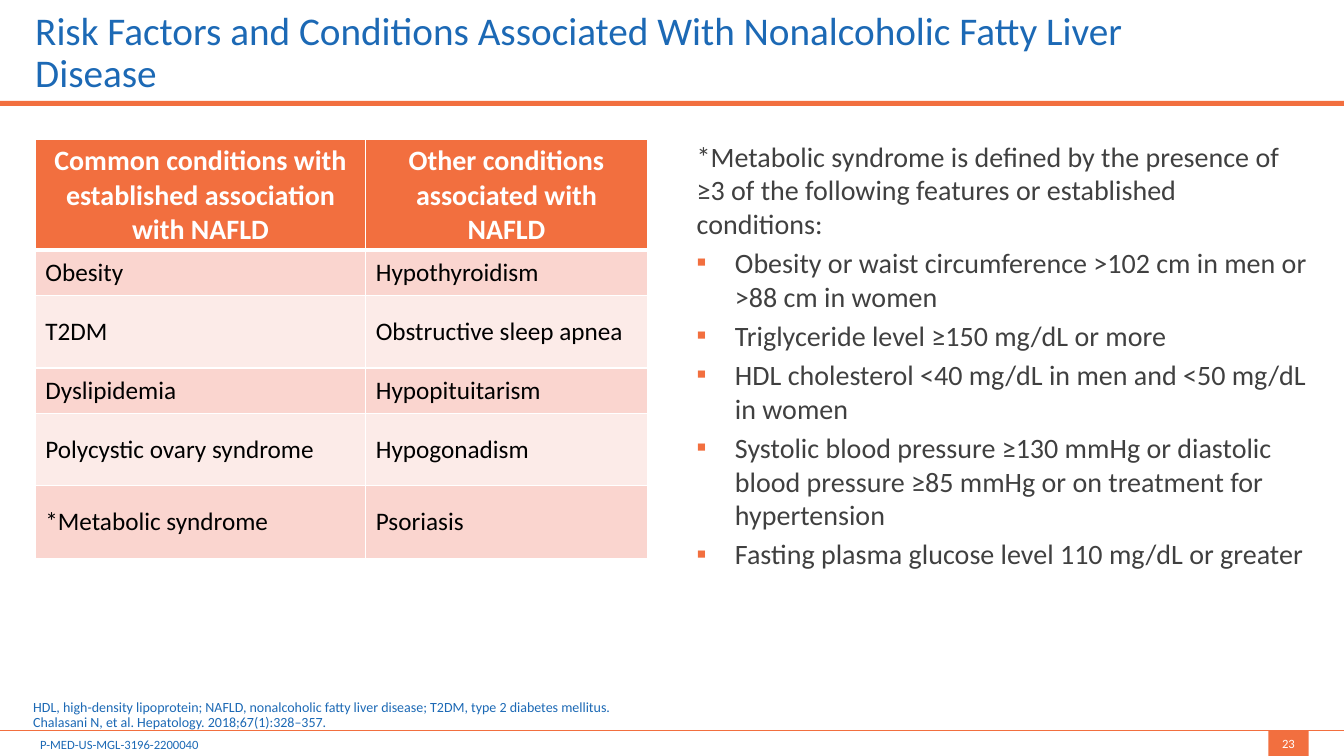
from dataclasses import dataclass

from lxml.etree import SubElement
from pptx import Presentation
from pptx.dml.color import RGBColor as RGB
from pptx.enum.shapes import MSO_CONNECTOR, MSO_SHAPE
from pptx.enum.text import MSO_ANCHOR as ANCHOR, PP_ALIGN as ALIGN
from pptx.oxml.ns import qn
from pptx.util import Inches, Pt


@dataclass(frozen=True)
class Theme:
    font: str = "Calibri"
    orange: str = "F26F3F"
    blue: str = "1C69B5"
    gray: str = "404040"
    black: str = "000000"
    white: str = "FFFFFF"
    bands: tuple = ("FAD5CF", "FCEBE8")
    title: int = 28
    body: int = 20
    cell: int = 18
    note: int = 10
    footer: int = 9


THEME = Theme()
WIDTH, HEIGHT = 13.33, 7.5
MARGIN = 0.35
GUTTER = 0.49
COLUMN = (WIDTH - 2 * MARGIN - GUTTER) / 2
HEADER_HEIGHT = 1
CONTENT_TOP = 1.38
FOOTER_HEIGHT = 0.25
FOOTER_TOP = HEIGHT - FOOTER_HEIGHT
BULLET_INDENT = 0.38

TITLE = "Risk Factors and Conditions Associated With Nonalcoholic Fatty Liver Disease"
CONDITIONS = [
    ("Common conditions with established association with NAFLD",
     "Other conditions associated with NAFLD"),
    ("Obesity", "Hypothyroidism"),
    ("T2DM", "Obstructive sleep apnea"),
    ("Dyslipidemia", "Hypopituitarism"),
    ("Polycystic ovary syndrome", "Hypogonadism"),
    ("*Metabolic syndrome", "Psoriasis"),
]
COLUMN_SHARES = (0.54, 0.46)
ROW_HEIGHTS = (1.09, 0.45, 0.72, 0.45, 0.72, 0.72)
DEFINITION = (
    "*Metabolic syndrome is defined by the presence of ≥3 of the following "
    "features or established conditions:"
)
FEATURES = [
    "Obesity or waist circumference >102 cm in men or >88 cm in women",
    "Triglyceride level ≥150 mg/dL or more",
    "HDL cholesterol <40 mg/dL in men and <50 mg/dL in women",
    "Systolic blood pressure ≥130 mmHg or diastolic blood pressure ≥85 mmHg "
    "or on treatment for hypertension",
    "Fasting plasma glucose level 110 mg/dL or greater",
]
FOOTNOTE = (
    "HDL, high-density lipoprotein; NAFLD, nonalcoholic fatty liver disease; "
    "T2DM, type 2 diabetes mellitus.\v"
    "Chalasani N, et al. Hepatology. 2018;67(1):328–357."
)


def inches(box):
    return [Inches(length) for length in box]


def style(paragraph, size, color, bold=False):
    font = paragraph.font
    font.name, font.size, font.bold = THEME.font, Pt(size), bold
    font.color.rgb = RGB.from_string(color)
    for run in paragraph.runs:
        run.font.size = Pt(size)


def add_text(slide, box, text, size, color, anchor=ANCHOR.TOP, inset=(0, 0),
             wrap=True, spacing=None):
    frame = slide.shapes.add_textbox(*inches(box)).text_frame
    frame.word_wrap = wrap
    frame.vertical_anchor = anchor
    frame.margin_left = frame.margin_right = Inches(inset[0])
    frame.margin_top = frame.margin_bottom = Inches(inset[1])
    frame.text = text
    paragraph = frame.paragraphs[0]
    paragraph.line_spacing = spacing
    style(paragraph, size, color)
    return frame


def add_bar(slide, box):
    bar = slide.shapes.add_shape(MSO_SHAPE.RECTANGLE, *inches(box))
    bar.shadow.inherit = False
    bar.fill.solid()
    bar.fill.fore_color.rgb = RGB.from_string(THEME.orange)
    bar.line.fill.background()
    return bar


def add_header(slide, box):
    left, top, width, height = box
    add_bar(slide, (left, top + height, width, 0.05))
    add_text(slide, (left + MARGIN, top, width * 0.89, height), TITLE, THEME.title,
             THEME.blue, ANCHOR.BOTTOM, (0, 0.05), spacing=0.9)


def set_borders(cell, top, bottom):
    properties = cell._tc.get_or_add_tcPr()
    for side, points in (("L", 1), ("R", 1), ("T", top), ("B", bottom)):
        border = SubElement(properties, qn(f"a:ln{side}"), w=str(Pt(points)))
        fill = SubElement(border, qn("a:solidFill"))
        SubElement(fill, qn("a:srgbClr"), val=THEME.white)


def add_conditions(slide, box):
    table = slide.shapes.add_table(
        len(CONDITIONS), len(COLUMN_SHARES), *inches(box)).table
    for column, share in zip(table.columns, COLUMN_SHARES):
        column.width = Inches(box[2] * share)
    for r, (labels, row_height) in enumerate(zip(CONDITIONS, ROW_HEIGHTS)):
        table.rows[r].height = Inches(row_height)
        heading = r == 0
        fill = THEME.orange if heading else THEME.bands[(r - 1) % 2]
        for c, label in enumerate(labels):
            cell = table.cell(r, c)
            set_borders(cell, top=3 if r == 1 else 1, bottom=3 if heading else 1)
            cell.fill.solid()
            cell.fill.fore_color.rgb = RGB.from_string(fill)
            cell.vertical_anchor = ANCHOR.MIDDLE
            cell.text = label
            paragraph = cell.text_frame.paragraphs[0]
            paragraph.alignment = ALIGN.CENTER if heading else ALIGN.LEFT
            style(paragraph, THEME.body if heading else THEME.cell,
                  THEME.white if heading else THEME.black, heading)


def add_bullet(paragraph):
    properties = paragraph._p.get_or_add_pPr()
    properties.set("marL", str(Inches(BULLET_INDENT)))
    properties.set("indent", str(-Inches(BULLET_INDENT)))
    color = SubElement(properties, qn("a:buClr"))
    SubElement(color, qn("a:srgbClr"), val=THEME.orange)
    SubElement(properties, qn("a:buFont"), typeface=THEME.font)
    SubElement(properties, qn("a:buChar"), char="▪")


def add_definition(slide, box):
    frame = add_text(slide, box, DEFINITION, THEME.body, THEME.gray)
    for feature in FEATURES:
        paragraph = frame.add_paragraph()
        paragraph.text = feature
        paragraph.space_before = Pt(THEME.body * 0.2)
        add_bullet(paragraph)
        style(paragraph, THEME.body, THEME.gray)


def add_footer(slide, box):
    left, top, width, height = box
    number = add_bar(slide, (left + width - MARGIN - 0.4, top, 0.4, height)).text_frame
    number.margin_left = number.margin_right = 0
    number.vertical_anchor = ANCHOR.MIDDLE
    number.text = "23"
    number.paragraphs[0].alignment = ALIGN.CENTER
    style(number.paragraphs[0], THEME.footer, THEME.white)

    rule = slide.shapes.add_connector(
        MSO_CONNECTOR.STRAIGHT, *inches((left, top, left + width, top)))
    rule.line.color.rgb = RGB.from_string(THEME.orange)
    rule.line.width = Pt(1)
    SubElement(rule._element.spPr, qn("a:effectLst"))

    add_text(slide, (left + 0.3, top + 0.01, 1.78, height), "P-MED-US-MGL-3196-2200040",
             THEME.footer, THEME.blue, inset=(0.1, 0.05), wrap=False)
    add_text(slide, (left + 0.33, top - 0.3, 11.13, 0.3), FOOTNOTE, THEME.note,
             THEME.blue, ANCHOR.BOTTOM, spacing=0.9)


def main():
    deck = Presentation()
    deck.slide_width, deck.slide_height = inches((WIDTH, HEIGHT))
    slide = deck.slides.add_slide(deck.slide_layouts[6])
    add_header(slide, (0, 0, WIDTH, HEADER_HEIGHT))
    add_conditions(slide, (MARGIN, CONTENT_TOP, COLUMN, sum(ROW_HEIGHTS)))
    add_definition(slide, (MARGIN + COLUMN + GUTTER, CONTENT_TOP, COLUMN, 5.31))
    add_footer(slide, (0, FOOTER_TOP, WIDTH, FOOTER_HEIGHT))
    deck.save("out.pptx")


if __name__ == "__main__":
    main()
